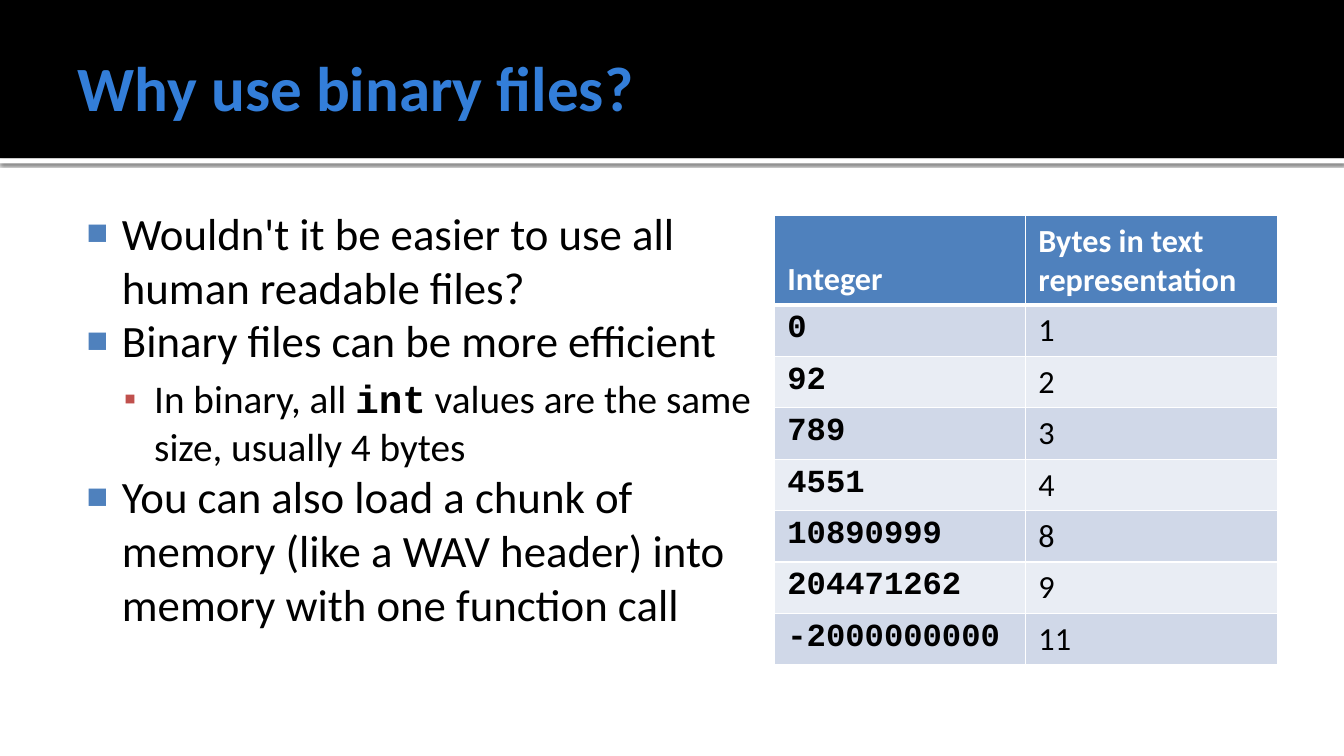
from dataclasses import dataclass
from lxml.etree import SubElement
from pptx import Presentation
from pptx.dml.color import RGBColor as RGB
from pptx.enum.shapes import MSO_SHAPE as SHAPE
from pptx.enum.text import MSO_ANCHOR as ANCHOR
from pptx.oxml import parse_xml
from pptx.oxml.ns import nsdecls, qn
from pptx.util import Inches, Pt


@dataclass(frozen=True)
class Theme:
    sans: str = "Calibri"
    mono: str = "Courier New"
    black: str = "000000"
    white: str = "FFFFFF"
    title: str = "337ED9"
    blue: str = "4F81BD"
    red: str = "C0504D"
    bands: tuple = ("D0D8E8", "E9EDF4")
    title_size: int = 45
    cell_size: int = 23


T = Theme()

# Per list level: type size, left margin, hanging indent, space before,
# bullet sign, bullet colour, bullet percent
LEVELS = (
    (32, 0.48, -0.35, 0, "■", T.blue, 80),
    (28, 0.8, -0.3, 5.6, "▪", T.red, 90),
)
# Each point is a level and its runs; a True flag marks code
POINTS = (
    (0, [("Wouldn't it be easier to use all human readable files?", False)]),
    (0, [("Binary files can be more efficient", False)]),
    (1, [("In binary, all ", False), ("int", True),
         (" values are the same size, usually 4 bytes", False)]),
    (0, [("You can also load a chunk of memory (like a WAV header) "
          "into memory with one function call", False)]),
)
HEADS = (["Integer"], ["Bytes in text", "representation"])
ROWS = (
    ("0", "1"), ("92", "2"), ("789", "3"), ("4551", "4"),
    ("10890999", "8"), ("204471262", "9"), ("-2000000000", "11"),
)


def add_run(para, text, size, color=T.black, bold=False, face=T.sans):
    run = para.add_run()
    run.text = text
    font = run.font
    font.name, font.size, font.bold = face, Pt(size), bold
    font.color.rgb = RGB.from_string(color)


def add_frame(slide, box, insets):
    frame = slide.shapes.add_textbox(*map(Inches, box)).text_frame
    frame.word_wrap = True
    (frame.margin_left, frame.margin_top,
     frame.margin_right, frame.margin_bottom) = map(Inches, insets)
    return frame


def add_bar(slide, box, color):
    bar = slide.shapes.add_shape(SHAPE.RECTANGLE, *map(Inches, box))
    bar.shadow.inherit = False
    bar.fill.solid()
    bar.fill.fore_color.rgb = RGB.from_string(color)
    bar.line.fill.background()
    return bar


def add_header(slide, box):
    left, top, width, height = box
    # White strip with a soft shadow, then the black band
    strip = add_bar(slide, (left, top + height, width, 0.05), T.white)
    effects = strip.element.spPr.find(qn("a:effectLst"))
    effects.append(parse_xml(
        f'<a:outerShdw {nsdecls("a")} blurRad="{Pt(2.5)}" dist="{Pt(0.8)}" '
        f'dir="5400000" algn="tl" rotWithShape="0"><a:srgbClr val="{T.black}">'
        '<a:alpha val="60000"/></a:srgbClr></a:outerShdw>'))
    add_bar(slide, box, T.black)
    # Title
    frame = add_frame(slide, (left + 0.67, top + 0.17, 12, 1.37),
                      (0.1, 0.05, 0.05, 0.05))
    frame.vertical_anchor = ANCHOR.MIDDLE
    add_run(frame.paragraphs[0], "Why use binary files?",
            T.title_size, T.title, True)


def set_bullet(para, margin, indent, sign, color, percent):
    props = para._p.get_or_add_pPr()
    props.set("marL", str(Inches(margin)))
    props.set("indent", str(Inches(indent)))
    tint = SubElement(props, qn("a:buClr"))
    SubElement(tint, qn("a:srgbClr"), val=color)
    SubElement(props, qn("a:buSzPct"), val=str(percent * 1000))
    SubElement(props, qn("a:buFont"), typeface="Arial")
    SubElement(props, qn("a:buChar"), char=sign)


def add_points(slide, box):
    frame = add_frame(slide, box, (0.06, 0.1, 0.1, 0.05))
    for i, (level, runs) in enumerate(POINTS):
        para = frame.add_paragraph() if i else frame.paragraphs[0]
        size, margin, indent, before, sign, color, percent = LEVELS[level]
        set_bullet(para, margin, indent, sign, color, percent)
        para.level = level
        para.space_before = Pt(before)
        for text, code in runs:
            add_run(para, text, size, bold=code,
                    face=T.mono if code else T.sans)


def set_cell(cell, lines, fill, style, top=1, bottom=1):
    cell.margin_left = cell.margin_right = Inches(0.13)
    cell.margin_top = cell.margin_bottom = Inches(0.06)
    cell.fill.solid()
    cell.fill.fore_color.rgb = RGB.from_string(fill)
    # Borders come before the fill in the cell properties
    props = cell._tc.get_or_add_tcPr()
    sides = (("L", 1), ("R", 1), ("T", top), ("B", bottom))
    for i, (side, width) in enumerate(sides):
        props.insert(i, parse_xml(
            f'<a:ln{side} {nsdecls("a")} w="{Pt(width)}"><a:solidFill>'
            f'<a:srgbClr val="{T.white}"/></a:solidFill></a:ln{side}>'))
    frame = cell.text_frame
    for i, line in enumerate(lines):
        para = frame.add_paragraph() if i else frame.paragraphs[0]
        add_run(para, line, T.cell_size, **style)


def add_grid(slide, box):
    shape = slide.shapes.add_table(len(ROWS) + 1, 2, *map(Inches, box))
    table = shape.table
    table.horz_banding = False
    for col, width in zip(table.columns, (2.49, 2.5)):
        col.width = Inches(width)
    for i, row in enumerate(table.rows):
        row.height = Inches(0.51 if i else 0.88)
    # Heading row
    for c, lines in enumerate(HEADS):
        cell = table.cell(0, c)
        cell.vertical_anchor = ANCHOR.BOTTOM
        set_cell(cell, lines, T.blue, dict(color=T.white, bold=True), bottom=3)
    # Banded rows: code on the left, plain counts on the right
    styles = (dict(bold=True, face=T.mono), {})
    for r, values in enumerate(ROWS):
        for c, value in enumerate(values):
            set_cell(table.cell(r + 1, c), [value], T.bands[r % 2],
                     styles[c], top=1 if r else 3)


def main():
    deck = Presentation()
    deck.slide_width, deck.slide_height = Inches(13.33), Inches(7.5)
    slide = deck.slides.add_slide(deck.slide_layouts[6])
    add_header(slide, (0, 0, 13.33, 1.57))
    add_points(slide, (0.67, 1.94, 7.17, 5.06))
    add_grid(slide, (7.68, 2.14, 4.99, 4.48))
    deck.save("out.pptx")


if __name__ == "__main__":
    main()
